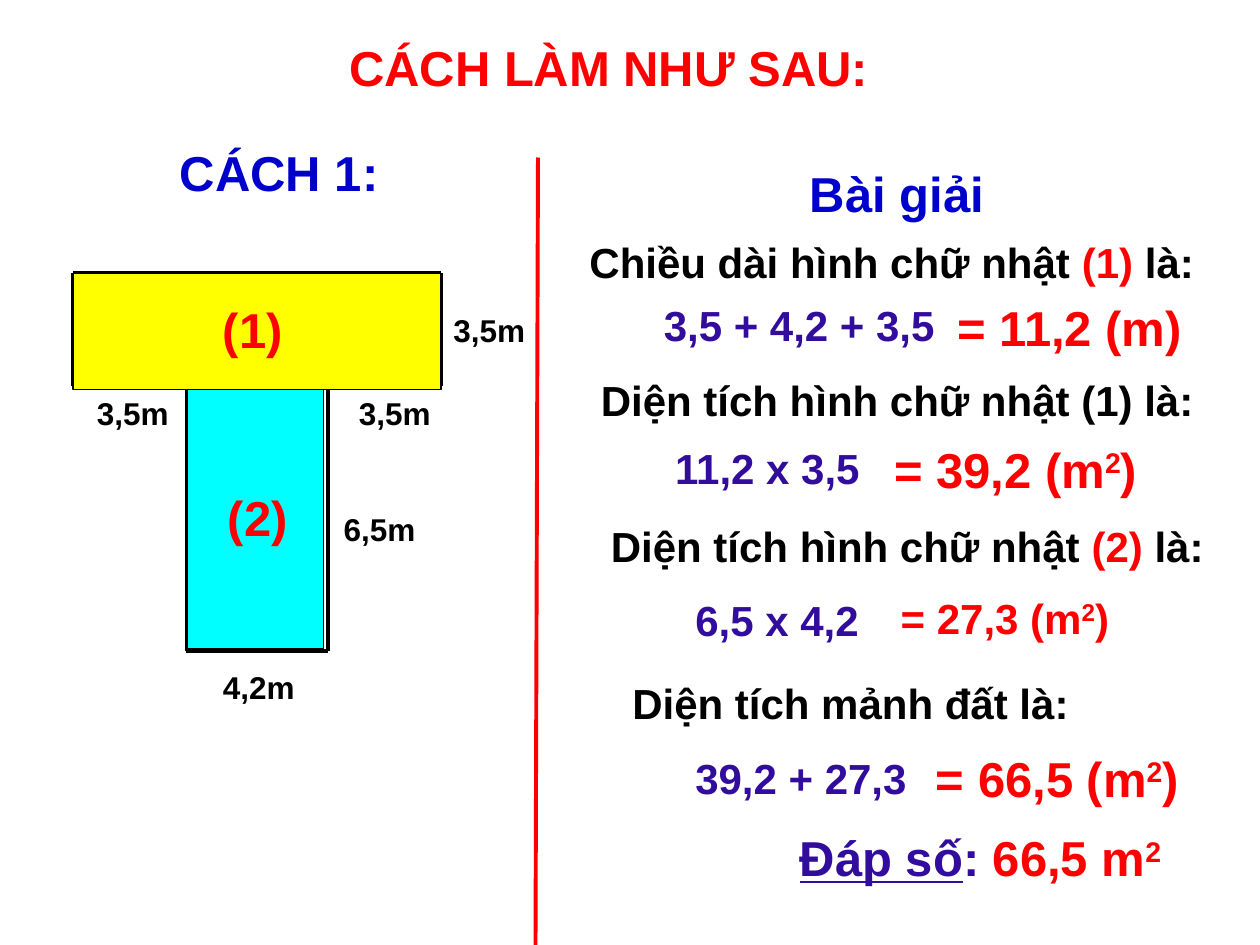
from itertools import pairwise

from lxml.etree import SubElement
from pptx import Presentation
from pptx.dml.color import RGBColor
from pptx.enum.shapes import MSO_CONNECTOR, MSO_SHAPE
from pptx.enum.text import MSO_ANCHOR, MSO_AUTO_SIZE, PP_ALIGN
from pptx.oxml.ns import qn
from pptx.util import Inches, Pt

COLORS = {
    "red": "FF0000", "blue": "0000CC", "violet": "320C9C",
    "black": "000000", "yellow": "FFFF00", "cyan": "00FFFF",
}
LARGE, MEDIUM, SMALL = 28, 24, 18
HEIGHTS = {LARGE: 0.57, MEDIUM: 0.51, SMALL: 0.4}

# Each run: text, colour, optional style ("super" or "underline")
TITLE = [("CÁCH LÀM NHƯ SAU:", "red")]
SQUARE = [("2", "red", "super"), (")", "red")]

# left, top, width, size, runs
HEADINGS = [
    (1.33, 1.08, 1.83, LARGE, [("CÁCH 1:", "blue")]),
    (6.33, 1.25, 1.83, LARGE, [("Bài giải", "blue")]),
]
SOLUTION = [
    (4.58, 1.83, 5.08, MEDIUM,
     [("Chiều dài hình chữ nhật ", "black"), ("(1) ", "red"), ("là:", "black")]),
    (5.17, 2.33, 2.5, MEDIUM, [("3,5 + 4,2 + 3,5", "violet")]),
    (7.5, 2.31, 2.01, LARGE, [("= 11,2 (m)", "red")]),
    (4.67, 2.92, 5.08, MEDIUM, [("Diện tích hình chữ nhật (1) là:", "black")]),
    (5.26, 3.46, 1.75, MEDIUM, [("11,2 x 3,5", "violet")]),
    (7, 3.44, 2.17, LARGE, [("= 39,2 (m", "red"), *SQUARE]),
    (4.75, 4.08, 5, MEDIUM,
     [("Diện tích hình chữ nhật", "black"), (" (2) ", "red"), ("là:", "black")]),
    (5.42, 4.67, 1.67, MEDIUM, [("6,5 x 4,2", "violet")]),
    (7.05, 4.65, 1.89, MEDIUM, [("= 27,3 (m", "red"), *SQUARE]),
    (4.92, 5.33, 4.58, MEDIUM, [("Diện tích mảnh đất là:", "black")]),
    (5.42, 5.92, 2.17, MEDIUM, [("39,2 + 27,3", "violet")]),
    (7.33, 5.89, 2.17, LARGE, [("= 66,5 (m", "red"), *SQUARE]),
    (6.25, 6.52, 3.25, LARGE,
     [("Đáp số", "violet", "underline"), (": ", "violet"),
      ("66,5 m", "red"), ("2", "red", "super")]),
]
DIMENSIONS = [  # left, top, length
    (2.75, 3.08, "3,5m"), (3.5, 2.42, "3,5m"), (0.67, 3.08, "3,5m"),
    (2.63, 4, "6,5m"), (1.67, 5.25, "4,2m"),
]
PART_NAMES = [(1.67, 2.33, "(1)"), (1.71, 3.82, "(2)")]
PARTS = [(1.49, 3.07, 1.08, 2.08, "cyan"), (0.58, 2.17, 2.92, 0.92, "yellow")]

BAR_LEFT, BAR_RIGHT, BAR_TOP, BAR_BOTTOM = 0.58, 3.5, 2.17, 3.06
STEM_LEFT, STEM_RIGHT, STEM_BOTTOM = 1.48, 2.6, 5.17
PLOT_OUTLINE = [
    (STEM_LEFT, BAR_BOTTOM), (BAR_LEFT, BAR_BOTTOM), (BAR_LEFT, BAR_TOP),
    (BAR_RIGHT, BAR_TOP), (BAR_RIGHT, BAR_BOTTOM), (STEM_RIGHT, BAR_BOTTOM),
    (STEM_RIGHT, STEM_BOTTOM), (STEM_LEFT, STEM_BOTTOM), (STEM_LEFT, BAR_BOTTOM),
]
DIVIDER = [(4.27, 1.25), (4.25, 7.5)]


def color(name):
    return RGBColor.from_string(COLORS[name])


def write_text(shape, size, runs):
    frame = shape.text_frame
    frame.word_wrap = True
    frame.auto_size = MSO_AUTO_SIZE.NONE
    frame.vertical_anchor = MSO_ANCHOR.TOP
    paragraph = frame.paragraphs[0]
    paragraph.alignment = PP_ALIGN.LEFT
    paragraph.font.name = "Arial"
    paragraph.font.size = Pt(size)
    paragraph.font.bold = True
    for text, color_name, *style in runs:
        run = paragraph.add_run()
        run.text = text
        run.font.color.rgb = color(color_name)
        if "underline" in style:
            run.font.underline = True
        if "super" in style:
            run.font._element.set("baseline", "30000")


def add_text(slide, left, top, width, size, runs):
    box = slide.shapes.add_textbox(
        Inches(left), Inches(top), Inches(width), Inches(HEIGHTS[size]))
    write_text(box, size, runs)


def add_line(slide, start, end, color_name):
    line = slide.shapes.add_connector(
        MSO_CONNECTOR.STRAIGHT, *map(Inches, (*start, *end)))
    line.line.color.rgb = color(color_name)
    line.line.width = Pt(2.25)
    SubElement(line._element.spPr, qn("a:effectLst"))


def add_part(slide, left, top, width, height, fill):
    part = slide.shapes.add_shape(
        MSO_SHAPE.RECTANGLE, *map(Inches, (left, top, width, height)))
    part.shadow.inherit = False
    part.fill.solid()
    part.fill.fore_color.rgb = color(fill)
    part.line.color.rgb = color("black")
    part.line.width = Pt(0.75)


def main():
    presentation = Presentation()
    presentation.slide_width, presentation.slide_height = Inches(10), Inches(7.5)
    slide = presentation.slides.add_slide(presentation.slide_layouts[5])

    title = slide.shapes.title
    title.left, title.top = Inches(2.67), Inches(0.25)
    title.width, title.height = Inches(4.42), Inches(HEIGHTS[LARGE])
    write_text(title, LARGE, TITLE)

    for start, end in pairwise(PLOT_OUTLINE):
        add_line(slide, start, end, "black")
    add_line(slide, *DIVIDER, "red")
    for left, top, length in DIMENSIONS:
        add_text(slide, left, top, 0.83, SMALL, [(length, "black")])
    for text in HEADINGS + SOLUTION:
        add_text(slide, *text)
    for part in PARTS:
        add_part(slide, *part)
    for left, top, name in PART_NAMES:
        add_text(slide, left, top, 0.83, LARGE, [(name, "red")])

    presentation.save("out.pptx")


if __name__ == "__main__":
    main()
